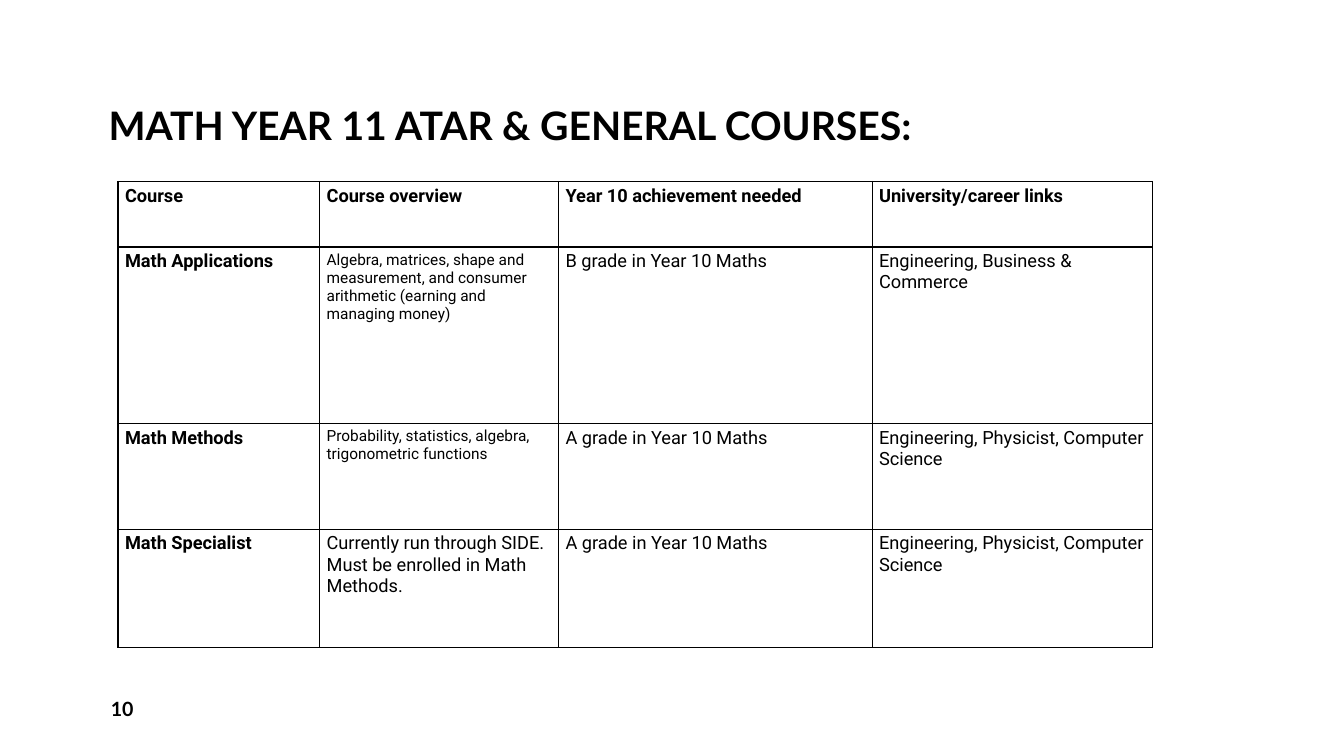
import pptx
import pptx.util
import pptx.dml.color
import pptx.enum.text
from lxml import etree

Inches = pptx.util.Inches
Pt = pptx.util.Pt
ANCHOR = pptx.enum.text.MSO_ANCHOR

TITLE = "MATH YEAR 11 ATAR & GENERAL COURSES:"
PAGE = "10"
HEAD = ["Course", "Course overview", "Year 10 achievement needed",
        "University/career links"]
ROWS = [
    ["Math Applications",
     "Algebra, matrices, shape and measurement, and consumer arithmetic "
     "(earning and managing money)",
     "B grade in Year 10 Maths", "Engineering, Business & Commerce"],
    ["Math Methods",
     "Probability, statistics, algebra, trigonometric functions",
     "A grade in Year 10 Maths", "Engineering, Physicist, Computer Science"],
    ["Math Specialist",
     "Currently run through SIDE. Must be enrolled in Math Methods.",
     "A grade in Year 10 Maths", "Engineering, Physicist, Computer Science"],
]
SMALL = {(1, 1), (2, 1)}
WIDTHS = [2, 2.37, 3.11, 2.78]
HEIGHTS = [0.65, 1.75, 1.05, 1.17]
BLACK, WHITE = "000000", "FFFFFF"


def color(code):
    return pptx.dml.color.RGBColor.from_string(code)


def write(frame, text, size=13, font="Roboto", bold=False, space=None):
    frame.word_wrap = True
    para = frame.paragraphs[0]
    para.line_spacing = space
    run = para.add_run()
    run.text = text
    run.font.size = Pt(size)
    run.font.name = font
    run.font.bold = bold
    run.font.color.rgb = color(BLACK)


def add_text(slide, box, text, anchor, **style):
    frame = slide.shapes.add_textbox(*map(Inches, box)).text_frame
    frame.vertical_anchor = anchor
    write(frame, text, font="Lato", bold=True, **style)


def border(cell, code=BLACK, width=1):
    props = cell._tc.get_or_add_tcPr()
    space = "http://schemas.openxmlformats.org/drawingml/2006/main"
    for side in ("lnL", "lnR", "lnT", "lnB"):
        line = etree.SubElement(props, f"{{{space}}}{side}", w=str(Pt(width)))
        fill = etree.SubElement(line, f"{{{space}}}solidFill")
        etree.SubElement(fill, f"{{{space}}}srgbClr", val=code)


def add_grid(slide):
    data = [HEAD] + ROWS
    place = (1.17, 1.8, sum(WIDTHS), sum(HEIGHTS))
    grid = slide.shapes.add_table(
        len(data), len(HEAD), *map(Inches, place)).table
    for col, width in zip(grid.columns, WIDTHS):
        col.width = Inches(width)
    for row, height in zip(grid.rows, HEIGHTS):
        row.height = Inches(height)
    for r, texts in enumerate(data):
        for c, text in enumerate(texts):
            cell = grid.cell(r, c)
            cell.margin_left = cell.margin_right = Inches(0.07)
            cell.margin_top = cell.margin_bottom = Inches(0.04)
            border(cell)
            cell.fill.solid()
            cell.fill.fore_color.rgb = color(WHITE)
            write(cell.text_frame, text, bold=r == 0 or c == 0,
                  size=11 if (r, c) in SMALL else 13)


def main():
    deck = pptx.Presentation()
    deck.slide_width, deck.slide_height = Inches(13.33), Inches(7.5)
    slide = deck.slides.add_slide(deck.slide_layouts[6])
    add_text(slide, (0.98, 0.08, 11.38, 1.45), TITLE, ANCHOR.BOTTOM,
             size=28, space=0.9)
    add_text(slide, (1, 6.83, 2.92, 0.4), PAGE, ANCHOR.MIDDLE, size=14)
    add_grid(slide)
    deck.save("out.pptx")


if __name__ == "__main__":
    main()
